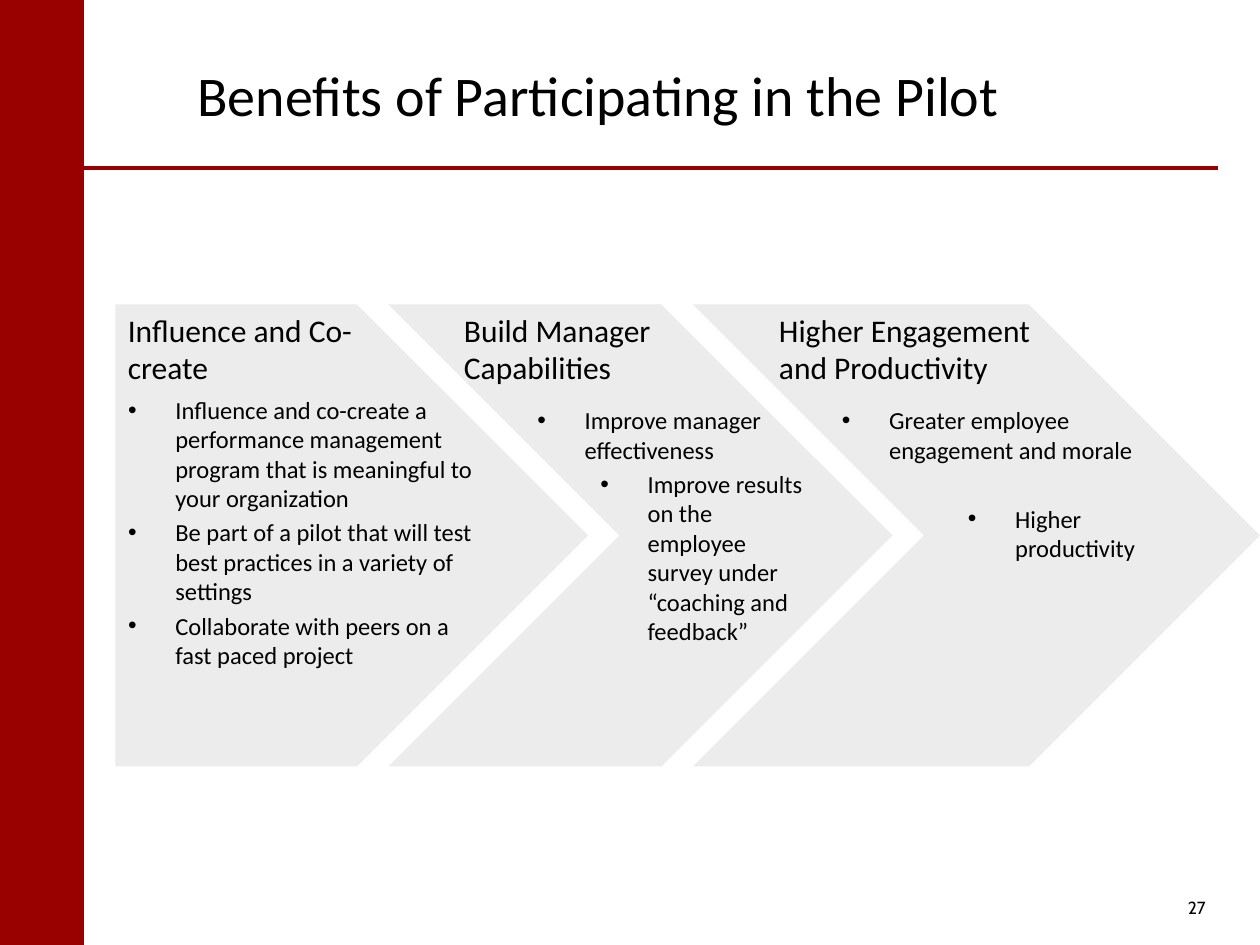
from lxml import etree
from pptx import Presentation
from pptx import util as u
from pptx.dml.color import RGBColor
from pptx.enum import shapes, text
from pptx.oxml.ns import qn

PX = 9525  # EMU in one px, 96 px to the inch
RED, GRAY, BLACK = "990000", "ECECEC", "000000"
FONT = "Calibri"
SHAPE, ALIGN = shapes.MSO_SHAPE, text.PP_ALIGN
HANG = 36
TOP, HIGH = 232, 352


def px(*vals):
    return [u.Emu(v * PX) for v in vals]


def color(code):
    return RGBColor.from_string(code)


class Deck:
    def __init__(self):
        self.prs = Presentation()
        self.prs.slide_width, self.prs.slide_height = px(960, 720)
        self.slide = self.prs.slides.add_slide(self.prs.slide_layouts[1])
        self.tree = self.slide.shapes

    def block(self, kind, box, fill):
        shape = self.tree.add_shape(kind, *px(*box))
        shape.shadow.inherit = False
        shape.fill.solid()
        shape.fill.fore_color.rgb = color(fill)
        shape.line.fill.background()

    def rule(self, x1, x2, y):
        line = self.tree.add_connector(shapes.MSO_CONNECTOR.STRAIGHT, *px(x1, y, x2, y))
        line.line.color.rgb = color(RED)
        line.line.width = u.Pt(2.25)
        etree.SubElement(line._element.spPr, qn("a:effectLst"))

    def run(self, para, words, size, font=FONT):
        run = para.add_run()
        run.text = words
        run.font.size = u.Pt(size)
        run.font.name = font
        run.font.color.rgb = color(BLACK)

    def holder(self, idx, box):
        """Move a placeholder into place and to the front."""
        shape = self.slide.placeholders[idx]
        shape.left, shape.top, shape.width, shape.height = px(*box)
        shape.text_frame.auto_size = text.MSO_AUTO_SIZE.NONE
        self.tree._spTree.append(shape._element)
        return shape.text_frame

    def frame(self, box):
        frame = self.tree.add_textbox(*px(*box)).text_frame
        frame.word_wrap = True
        return frame

    def title(self, words, box):
        frame = self.holder(0, box)
        frame.vertical_anchor = text.MSO_ANCHOR.MIDDLE
        para = frame.paragraphs[0]
        para.alignment = ALIGN.CENTER
        self.run(para, words, 32)

    def label(self, words, box, size=18, font=FONT, align=ALIGN.LEFT):
        para = self.frame(box).paragraphs[0]
        para.alignment = align
        self.run(para, words, size, font)

    def bullets(self, frame, items):
        """Fill a frame from (level, space before in points, words)."""
        for i, (level, gap, words) in enumerate(items):
            para = frame.add_paragraph() if i else frame.paragraphs[0]
            para.level = level
            para.alignment = ALIGN.LEFT
            para.space_before = u.Pt(gap)
            props = para._p.get_or_add_pPr()
            props.set("marL", str((HANG + 48 * level) * PX))
            props.set("indent", str(-HANG * PX))
            etree.SubElement(props, qn("a:buFont"), typeface="Arial")
            etree.SubElement(props, qn("a:buChar"), char="•")
            self.run(para, words, 14)


def main():
    deck = Deck()
    deck.block(SHAPE.RECTANGLE, (0, 0, 64, 720), RED)
    deck.rule(64, 928, 128)
    deck.title("Benefits of Participating in the Pilot", (72, 16, 768, 112))
    deck.label("27", (800, 679, 128, 24), 10, "Cabin", ALIGN.RIGHT)

    for kind, left, wide in [
        (SHAPE.PENTAGON, 88, 360),
        (SHAPE.CHEVRON, 296, 384),
        (SHAPE.CHEVRON, 528, 432),
    ]:
        deck.block(kind, (left, TOP, wide, HIGH), GRAY)

    for words, left, wide in [
        ("Influence and Co-create", 88, 192),
        ("Build Manager Capabilities", 344, 176),
        ("Higher Engagement and Productivity", 584, 216),
    ]:
        deck.label(words, (left, TOP, wide, 68))

    deck.bullets(deck.holder(1, (88, 296, 288, 200)), [
        (0, 0, "Influence and co-create a performance management program "
               "that is meaningful to your organization"),
        (0, 2.8, "Be part of a pilot that will test best practices in a variety of settings"),
        (0, 2.8, "Collaborate with peers on a fast paced project"),
    ])
    deck.bullets(deck.frame((400, 304, 224, 200)), [
        (0, 0, "Improve manager effectiveness"),
        (1, 2.8, "Improve results on the employee survey under “coaching and feedback”"),
    ])
    deck.bullets(deck.frame((632, 304, 272, 200)), [
        (0, 0, "Greater employee engagement and morale"),
        (2, 22.6, "Higher productivity"),
    ])
    deck.prs.save("out.pptx")


if __name__ == "__main__":
    main()
